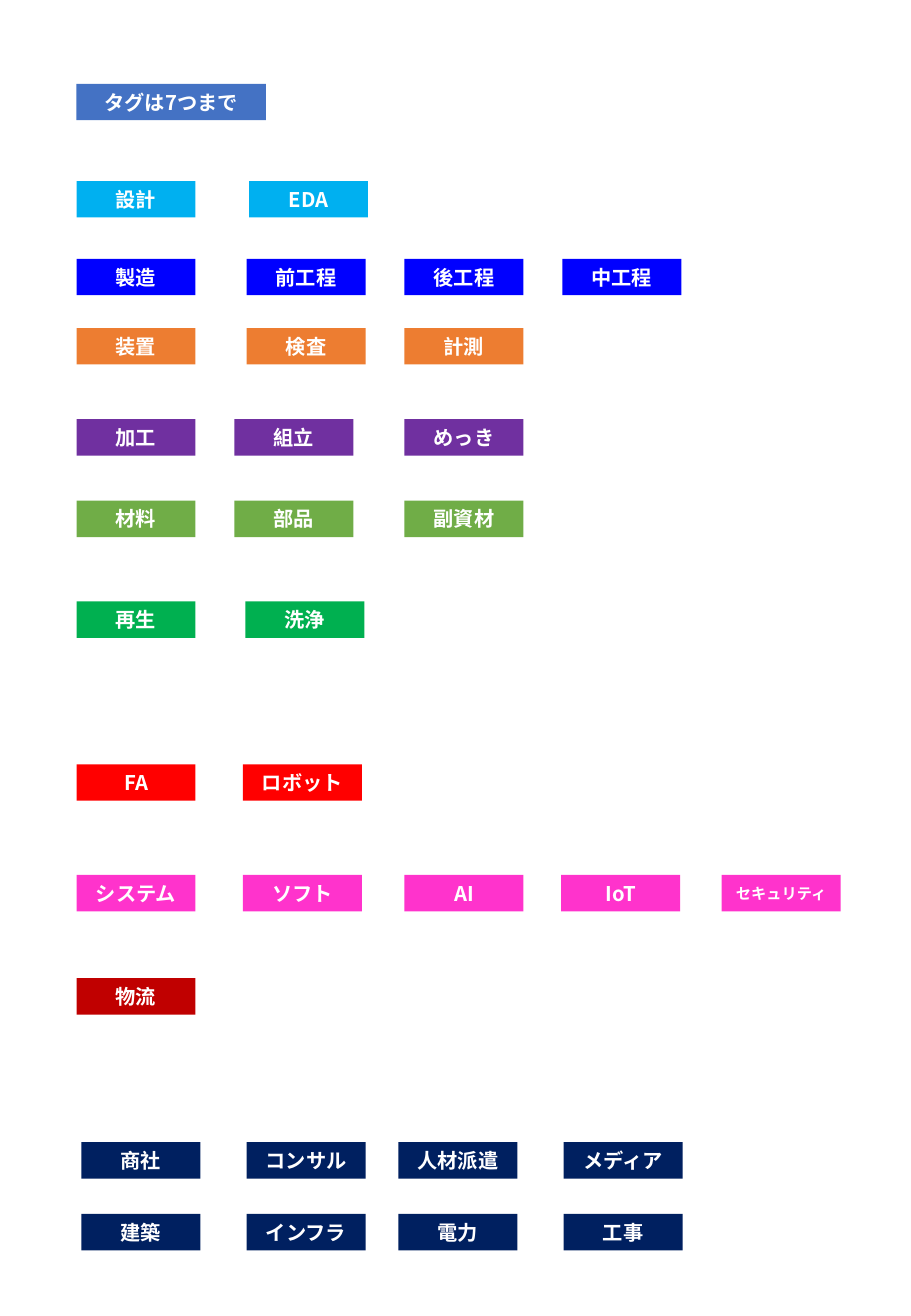
from pptx import Presentation
from pptx.dml.color import RGBColor
from pptx.enum.shapes import MSO_SHAPE
from pptx.enum.text import MSO_ANCHOR, PP_ALIGN
from pptx.oxml.ns import qn
from pptx.util import Pt

EMU_PER_PX = 9144
SLIDE_WIDTH, SLIDE_HEIGHT = 750, 1083
TAG_WIDTH, TAG_HEIGHT = 98, 30
TITLE_WIDTH = 156
MARGIN_LEFT = 63
FONT_NAME = "Noto Sans CJK JP"
SMALL_TAG = "セキュリティ"

WHITE = RGBColor(0xFF, 0xFF, 0xFF)
STEEL_BLUE = RGBColor(0x44, 0x72, 0xC4)
SKY = RGBColor(0x00, 0xB0, 0xF0)
BLUE = RGBColor(0x00, 0x00, 0xFF)
ORANGE = RGBColor(0xED, 0x7D, 0x31)
PURPLE = RGBColor(0x70, 0x30, 0xA0)
LIGHT_GREEN = RGBColor(0x70, 0xAD, 0x47)
GREEN = RGBColor(0x00, 0xB0, 0x50)
RED = RGBColor(0xFF, 0x00, 0x00)
PINK = RGBColor(0xFF, 0x33, 0xCC)
DARK_RED = RGBColor(0xC0, 0x00, 0x00)
NAVY = RGBColor(0x00, 0x20, 0x60)

TAG_ROWS = [
    (MARGIN_LEFT, 149, SKY, {"設計": 0, "EDA": 142}),
    (MARGIN_LEFT, 213, BLUE, {"製造": 0, "前工程": 140, "後工程": 270, "中工程": 400}),
    (MARGIN_LEFT, 270, ORANGE, {"装置": 0, "検査": 140, "計測": 270}),
    (MARGIN_LEFT, 345, PURPLE, {"加工": 0, "組立": 130, "めっき": 270}),
    (MARGIN_LEFT, 412, LIGHT_GREEN, {"材料": 0, "部品": 130, "副資材": 270}),
    (MARGIN_LEFT, 495, GREEN, {"再生": 0, "洗浄": 139}),
    (MARGIN_LEFT, 629, RED, {"FA": 0, "ロボット": 137}),
    (MARGIN_LEFT, 720, PINK,
     {"システム": 0, "ソフト": 137, "AI": 270, "IoT": 399, SMALL_TAG: 531}),
    (MARGIN_LEFT, 805, DARK_RED, {"物流": 0}),
    (67, 940, NAVY, {"商社": 0, "コンサル": 136, "人材派遣": 261, "メディア": 397}),
    (67, 999, NAVY, {"建築": 0, "インフラ": 136, "電力": 261, "工事": 397}),
]


def to_emu(*lengths):
    return [length * EMU_PER_PX for length in lengths]


def add_tag(slide, box, label, color, size=12):
    shape = slide.shapes.add_shape(MSO_SHAPE.RECTANGLE, *to_emu(*box))
    shape.shadow.inherit = False
    shape.fill.solid()
    shape.fill.fore_color.rgb = color
    shape.line.fill.background()
    frame = shape.text_frame
    frame.word_wrap = True
    frame.vertical_anchor = MSO_ANCHOR.MIDDLE
    paragraph = frame.paragraphs[0]
    paragraph.alignment = PP_ALIGN.CENTER
    run = paragraph.add_run()
    run.text = label
    font_format = {"name": FONT_NAME, "size": Pt(size), "bold": True}
    for attribute, value in font_format.items():
        setattr(run.font, attribute, value)
    run.font.color.rgb = WHITE
    latin = run.font._element.find(qn("a:latin"))
    east_asian = latin.makeelement(qn("a:ea"), {"typeface": FONT_NAME})
    latin.addnext(east_asian)


def add_title(slide, left, top):
    add_tag(slide, (left, top, TITLE_WIDTH, TAG_HEIGHT), "タグは7つまで", STEEL_BLUE)


def add_tag_row(slide, left, top, color, tags):
    for label, offset in tags.items():
        box = (left + offset, top, TAG_WIDTH, TAG_HEIGHT)
        add_tag(slide, box, label, color, 9 if label == SMALL_TAG else 12)


def main():
    presentation = Presentation()
    presentation.slide_width, presentation.slide_height = to_emu(SLIDE_WIDTH, SLIDE_HEIGHT)
    slide = presentation.slides.add_slide(presentation.slide_layouts[6])
    add_title(slide, MARGIN_LEFT, 69)
    for row in TAG_ROWS:
        add_tag_row(slide, *row)
    presentation.save("out.pptx")


if __name__ == "__main__":
    main()
